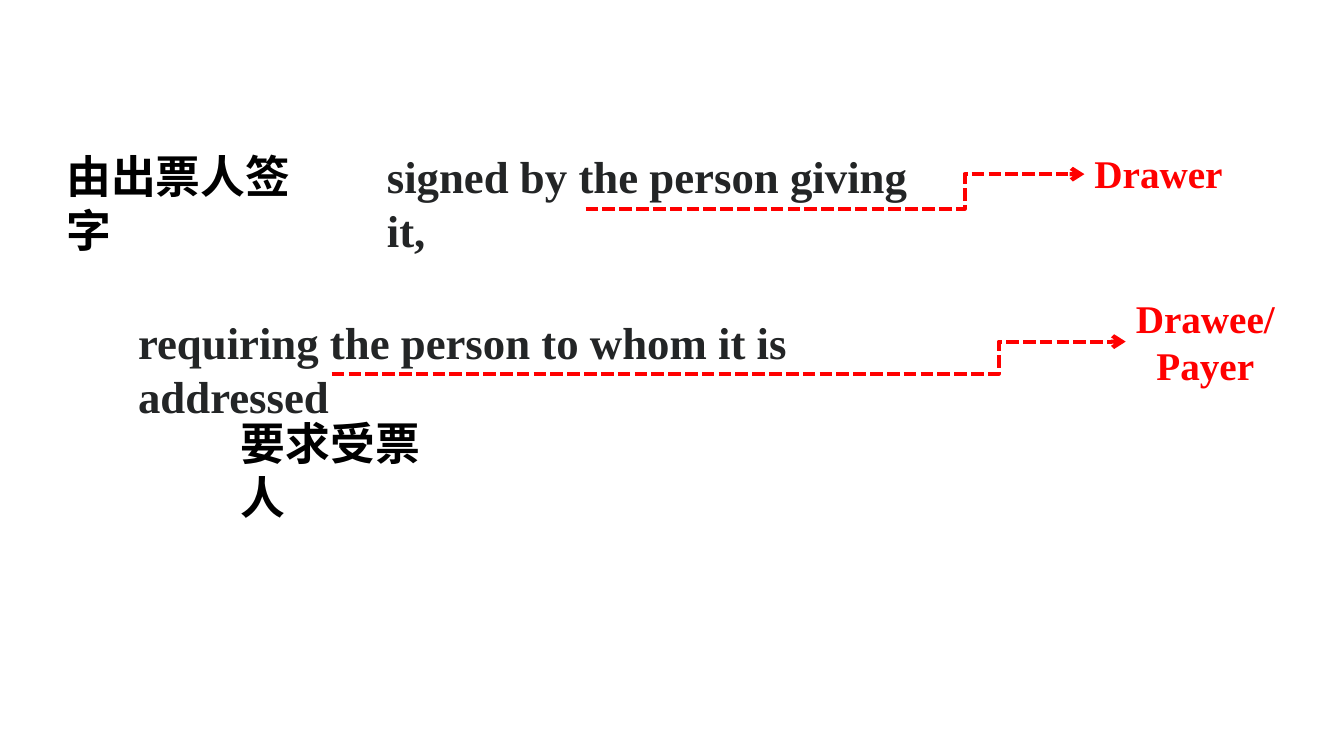
"""Build a slide naming the drawer and the drawee in the definition of a draft."""
from dataclasses import dataclass

from pptx import Presentation
from pptx import util as u
from pptx.dml.color import RGBColor
from pptx.enum import dml, shapes, text
from pptx.oxml.ns import qn
from pptx.slide import Slide
from lxml import etree


@dataclass(frozen=True)
class Style:
    """Font, size and colour of one kind of text."""
    font: str
    size: int
    color: RGBColor


@dataclass(frozen=True)
class Theme:
    """Colours and type sizes of the slide."""
    accent: RGBColor = RGBColor(0xFF, 0x00, 0x00)
    line_width: float = 3
    clause: Style = Style("Times New Roman", 32, RGBColor(0x23, 0x25, 0x26))
    chinese: Style = Style("Noto Sans CJK SC", 32, RGBColor(0x00, 0x00, 0x00))
    party: Style = Style("Times New Roman", 28, accent)


@dataclass(frozen=True)
class Phrase:
    """A piece of text with its place in centimetres."""
    wording: str
    style: Style
    left: float
    top: float
    width: float
    height: float
    wraps: bool = False
    align: text.PP_ALIGN = text.PP_ALIGN.LEFT


@dataclass(frozen=True)
class Pointer:
    """A bent arrow from an underlined phrase to a party, in centimetres."""
    start: tuple[float, float]
    end: tuple[float, float]
    bend: float


THEME = Theme()

PHRASES = [
    Phrase("signed by the person giving it,", THEME.clause, 9.5, 3.63, 14.8, 1.63, wraps=True),
    Phrase("Drawer", THEME.party, 27.33, 3.63, 3.76, 1.45),
    Phrase("由出票人签字", THEME.chinese, 1.42, 3.63, 7.2, 1.63, wraps=True),
    Phrase("requiring the person to whom it is addressed", THEME.clause,
           3.23, 7.8, 21.8, 1.63, wraps=True),
    Phrase("Drawee/\nPayer", THEME.party, 28.37, 7.29, 4.01, 2.64, align=text.PP_ALIGN.CENTER),
    Phrase("要求受票人", THEME.chinese, 5.82, 10.36, 6.15, 1.63),
]

POINTERS = [
    Pointer((14.76, 5.26), (27.33, 4.39), 0.76),
    Pointer((8.36, 9.42), (28.37, 8.61), 0.84),
]


def add_phrase(slide: Slide, phrase: Phrase) -> None:
    """Place one phrase as bold text."""
    box = slide.shapes.add_textbox(
        u.Cm(phrase.left), u.Cm(phrase.top), u.Cm(phrase.width), u.Cm(phrase.height))
    frame = box.text_frame
    frame.text = phrase.wording
    frame.word_wrap = phrase.wraps
    frame.auto_size = text.MSO_AUTO_SIZE.SHAPE_TO_FIT_TEXT
    for paragraph in frame.paragraphs:
        paragraph.alignment = phrase.align
        for run in paragraph.runs:
            run.font.name = phrase.style.font
            run.font.size = u.Pt(phrase.style.size)
            run.font.bold = True
            run.font.color.rgb = phrase.style.color
            east_asian = etree.SubElement(run.font._element, qn("a:ea"))
            east_asian.set("typeface", phrase.style.font)


def add_pointer(slide: Slide, pointer: Pointer) -> None:
    """Draw one dashed elbow arrow."""
    arrow = slide.shapes.add_connector(
        shapes.MSO_CONNECTOR.ELBOW, *map(u.Cm, pointer.start + pointer.end))
    arrow.line.color.rgb = THEME.accent
    arrow.line.width = u.Pt(THEME.line_width)
    arrow.line.dash_style = dml.MSO_LINE.SQUARE_DOT
    properties = arrow._element.spPr
    etree.SubElement(properties.find(qn("a:ln")), qn("a:tailEnd")).set("type", "arrow")
    etree.SubElement(properties, qn("a:effectLst"))
    bend = etree.SubElement(properties.find(qn("a:prstGeom")).find(qn("a:avLst")), qn("a:gd"))
    bend.set("name", "adj1")
    bend.set("fmla", f"val {round(pointer.bend * 100000)}")


def main() -> None:
    """Build and save the slide."""
    deck = Presentation()
    deck.slide_width, deck.slide_height = u.Cm(33.87), u.Cm(19.05)
    slide = deck.slides.add_slide(deck.slide_layouts.get_by_name("Blank"))
    for phrase in PHRASES:
        add_phrase(slide, phrase)
    for pointer in POINTERS:
        add_pointer(slide, pointer)
    deck.save("out.pptx")


if __name__ == "__main__":
    main()
